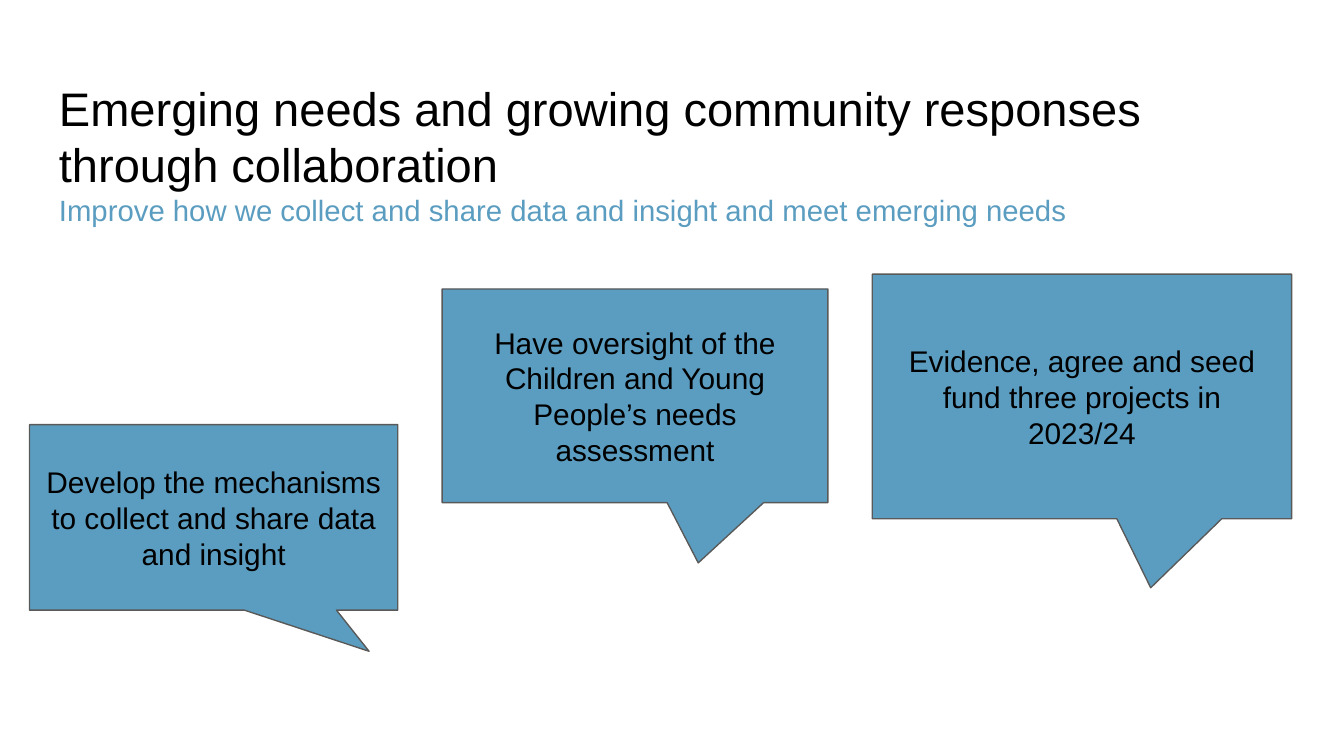
import pptx
import pptx.dml.color
import pptx.enum.shapes
import pptx.enum.text
import pptx.util

WIDTH = pptx.util.Inches(10)
HEIGHT = WIDTH * 9 // 16
BLACK, BLUE, GREY = "000000", "5B9DC0", "595959"


def color(value):
    return pptx.dml.color.RGBColor.from_string(value)


def set_up_frame(frame, anchor):
    frame.word_wrap = True
    frame.vertical_anchor = anchor
    frame.margin_left = frame.margin_right = pptx.util.Inches(0.1)
    frame.margin_top = frame.margin_bottom = pptx.util.Inches(0.1)
    paragraph = frame.paragraphs[0]
    paragraph.font.name = "Arial"
    return paragraph


presentation = pptx.Presentation()
presentation.slide_width = WIDTH
presentation.slide_height = HEIGHT
slide = presentation.slides.add_slide(presentation.slide_layouts[6])

# Heading: two title lines and a subtitle
heading = slide.shapes.add_textbox(
    pptx.util.Inches(0.34), pptx.util.Inches(0.49),
    pptx.util.Inches(9.32), pptx.util.Inches(0.63))
paragraph = set_up_frame(heading.text_frame, pptx.enum.text.MSO_ANCHOR.TOP)
heading_lines = [
    ("Emerging needs and growing community responses", 25.2, BLACK),
    ("through collaboration", 25.2, BLACK),
    ("Improve how we collect and share data and insight and meet emerging needs", 15.7, BLUE),
]
for index, (text, size, text_color) in enumerate(heading_lines):
    if index:
        paragraph.add_line_break()
    run = paragraph.add_run()
    run.text = text
    run.font.size = pptx.util.Pt(size)
    run.font.color.rgb = color(text_color)

# Callouts: left, top, width, height in inches, then the pointer tip
callouts = [
    ("Develop the mechanisms to collect and share data and insight",
     (0.22, 3.16, 2.74, 1.38), (0.422, 0.722)),
    ("Have oversight of the Children and Young People’s needs assessment",
     (3.29, 2.15, 2.87, 1.59), (0.164, 0.782)),
    ("Evidence, agree and seed fund three projects in 2023/24",
     (6.49, 2.04, 3.12, 1.82), (0.164, 0.782)),
]
for text, box, tip in callouts:
    shape = slide.shapes.add_shape(
        pptx.enum.shapes.MSO_SHAPE.ROUNDED_RECTANGULAR_CALLOUT,
        *[pptx.util.Inches(length) for length in box])
    shape.shadow.inherit = False
    shape.adjustments[0], shape.adjustments[1] = tip
    shape.adjustments[2] = 0  # square corners
    shape.fill.solid()
    shape.fill.fore_color.rgb = color(BLUE)
    shape.line.color.rgb = color(GREY)
    shape.line.width = pptx.util.Pt(0.75)
    paragraph = set_up_frame(shape.text_frame, pptx.enum.text.MSO_ANCHOR.MIDDLE)
    paragraph.text = text
    paragraph.alignment = pptx.enum.text.PP_ALIGN.CENTER
    paragraph.font.size = pptx.util.Pt(16)
    paragraph.font.color.rgb = color(BLACK)

presentation.save("out.pptx")
